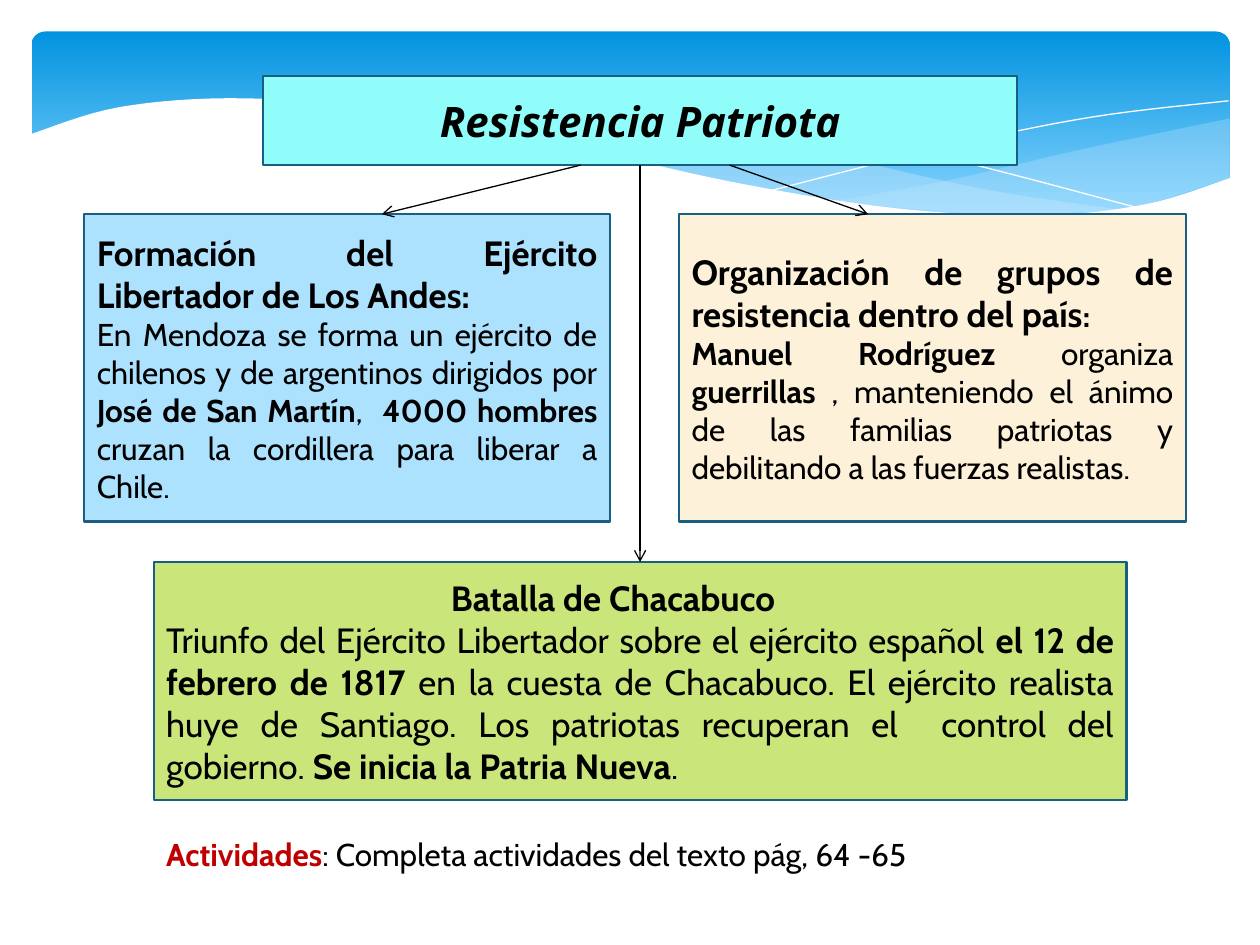
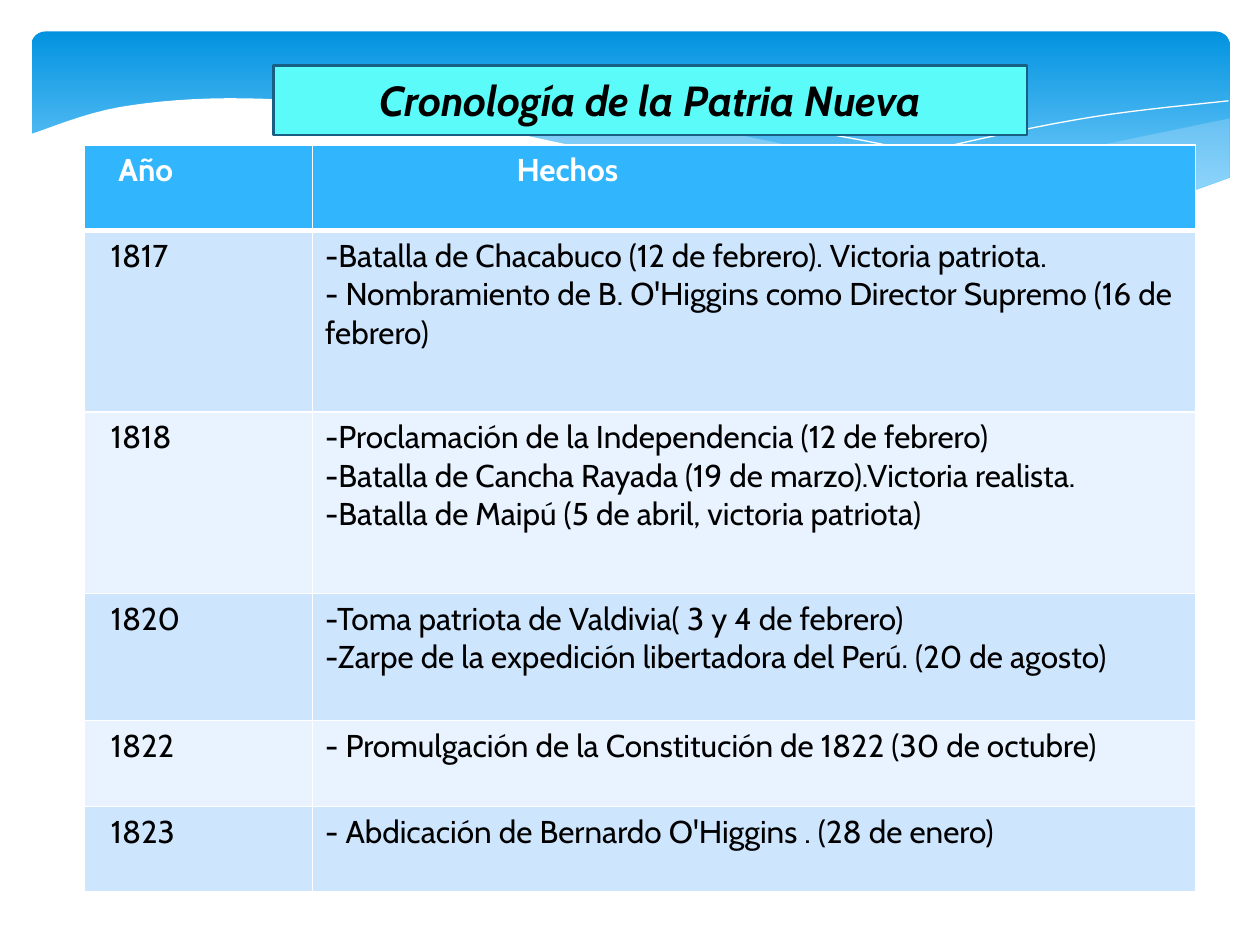
from dataclasses import dataclass
from typing import Optional

from lxml.etree import SubElement
from pptx import Presentation
from pptx.dml.color import RGBColor
from pptx.enum.shapes import MSO_CONNECTOR, MSO_SHAPE
from pptx.enum.text import MSO_ANCHOR, MSO_AUTO_SIZE, PP_ALIGN
from pptx.oxml.ns import qn
from pptx.util import Inches, Pt

COLORS = {
    "white": "FFFFFF",
    "black": "000000",
    "outline": "195F84",
    "sky_top": "0293E0",
    "sky_bottom": "83D3FE",
    "wave": "C6E7FC",
    "resistance": "91FDFA",
    "chronology": "5AFBF8",
    "army": "ADE2FE",
    "guerrilla": "FDF2D9",
    "battle": "CAE67B",
    "activities": "C00000",
    "header": "31B6FD",
    "odd_row": "CEE5FE",
    "even_row": "E8F3FF",
}
FONT = "Cabin"
TITLE_ONLY_LAYOUT = 5
CURVE_STEPS = 8


@dataclass(frozen=True)
class Run:
    text: str
    bold: bool = False
    size: float = 18
    color: str = "black"
    italic: bool = False
    font: str = FONT


@dataclass(frozen=True)
class Frame:
    left: float
    top: float
    width: float
    height: float

    def lengths(self) -> tuple:
        return tuple(Inches(value) for value in (self.left, self.top, self.width, self.height))


@dataclass(frozen=True)
class Box:
    frame: Frame
    fill: str
    paragraphs: tuple


@dataclass(frozen=True)
class Wave:
    curves: tuple
    fill: Optional[str] = None
    opacity: int = 100


WAVES = (
    Wave((
        ((9.76, 0.94), (8.61, 1.18), (7.53, 1.43), (6.61, 1.6)),
        ((6.61, 1.6), (8.14, 1.72), (8.97, 1.65), (9.76, 1.41)),
    ), "wave", 29),
    Wave((
        ((8.93, 1.67), (7.75, 1.49), (6.29, 1.16), (4.89, 0.89), (3.8, 0.8), (2.86, 0.86)),
        ((2.86, 0.86), (4.49, 1.16), (6.01, 1.5), (7.48, 1.7), (8.93, 1.67)),
    ), "wave", 40),
    Wave((((3.09, 0.9), (4.16, 0.81), (5.56, 0.91), (7.27, 1.2), (9.07, 1.66)),)),
    Wave((((6.13, 1.51), (7.48, 1.17), (8.66, 0.93), (9.75, 0.8)),)),
    Wave((
        ((9.77, 1.41), (9.1, 1.62), (8.23, 1.71), (7.08, 1.65), (5.79, 1.44),
         (4.47, 1.14), (3.16, 0.88), (1.93, 0.78), (0.95, 0.85), (0.23, 1.07)),
        ((0.23, 2.24), (9.77, 2.24)),
    ), "white"),
)

ARMY = Box(Frame(0.67, 1.7, 4.17, 2.44), "army", (
    (Run("Formación del Ejército Libertador de Los Andes:", True, 20),),
    (
        Run("En Mendoza se forma un ejército de chilenos y de argentinos dirigidos por "),
        Run("José de San Martín", True),
        Run(",  "),
        Run("4000 hombres ", True),
        Run("cruzan la cordillera para liberar a Chile."),
    ),
))
GUERRILLA = Box(Frame(5.39, 1.7, 4.02, 2.44), "guerrilla", (
    (Run("Organización de grupos de resistencia dentro del país", True, 20), Run(":", True)),
    (
        Run("Manuel Rodríguez ", True),
        Run("organiza "),
        Run("guerrillas ", True),
        Run(", manteniendo el ánimo de las familias patriotas y debilitando a las fuerzas realistas."),
    ),
))
BATTLE = Box(Frame(1.22, 4.46, 7.72, 1.89), "battle", (
    (Run("Batalla de Chacabuco", True, 20),),
    (
        Run("Triunfo del Ejército Libertador sobre el ejército español ", size=20),
        Run("el 12 de febrero de 1817 ", True, 20),
        Run("en la cuesta de Chacabuco. El ejército realista huye de Santiago. "
            "Los patriotas recuperan el  control del gobierno. ", size=20),
        Run("Se inicia la Patria Nueva", True, 20),
        Run(".", size=20),
    ),
))
ACTIVITIES = (
    Run("Actividades", True, color="activities"),
    Run(": Completa actividades del texto pág, 64 -65"),
)

CHRONOLOGY = (
    ("Año", ("Hechos",)),
    ("1817", (
        "-Batalla de Chacabuco (12 de febrero). Victoria patriota.",
        "- Nombramiento de B. O'Higgins como Director Supremo (16 de febrero)",
    )),
    ("1818", (
        "-Proclamación de la Independencia (12 de febrero)",
        "-Batalla de Cancha Rayada (19 de marzo).Victoria realista.",
        "-Batalla de Maipú (5 de abril, victoria patriota)",
    )),
    ("1820", (
        "-Toma patriota de Valdivia( 3 y 4 de febrero)",
        "-Zarpe de la expedición libertadora del Perú. (20 de agosto)",
    )),
    ("1822", ("- Promulgación de la Constitución de 1822 (30 de octubre)",)),
    ("1823", ("- Abdicación de Bernardo O'Higgins . (28 de enero)",)),
)
COLUMN_WIDTHS = (1.81, 7.01)
ROW_HEIGHTS = (0.68, 1.44, 1.44, 1.01, 0.68, 0.68)
HEADER_MARGINS = (0.27, 1.62)
BODY_MARGINS = (0.21, 0.1)


def rgb(name: str) -> RGBColor:
    return RGBColor.from_string(COLORS[name])


def write(text_frame, paragraphs: tuple, alignment=PP_ALIGN.LEFT) -> None:
    text_frame.word_wrap = True
    for index, runs in enumerate(paragraphs):
        paragraph = text_frame.add_paragraph() if index else text_frame.paragraphs[0]
        paragraph.alignment = alignment
        for item in runs:
            run = paragraph.add_run()
            run.text = item.text
            run.font.name = item.font
            run.font.size = Pt(item.size)
            run.font.bold = item.bold
            run.font.italic = item.italic
            run.font.color.rgb = rgb(item.color)


def paint_box(shape, fill: str) -> None:
    shape.fill.solid()
    shape.fill.fore_color.rgb = rgb(fill)
    shape.line.color.rgb = rgb("outline")
    shape.line.width = Pt(1.25)
    shape.text_frame.vertical_anchor = MSO_ANCHOR.MIDDLE


def spline(before: float, start: float, end: float, after: float, t: float) -> float:
    start_slope, end_slope = (end - before) / 2, (after - start) / 2
    change = end - start
    return (start + start_slope * t
            + (3 * change - 2 * start_slope - end_slope) * t ** 2
            + (start_slope + end_slope - 2 * change) * t ** 3)


def smooth_points(knots: tuple) -> list:
    padded = (knots[0], *knots, knots[-1])
    points = [
        tuple(Inches(spline(*values, step / CURVE_STEPS)) for values in zip(*padded[i:i + 4]))
        for i in range(len(knots) - 1)
        for step in range(CURVE_STEPS)
    ]
    return points + [tuple(Inches(value) for value in knots[-1])]


def draw_wave(slide, wave: Wave) -> None:
    points = [point for curve in wave.curves for point in smooth_points(curve)]
    builder = slide.shapes.build_freeform(*points[0])
    builder.add_line_segments(points[1:], close=wave.fill is not None)
    shape = builder.convert_to_shape()
    shape.shadow.inherit = False
    if wave.fill is None:
        shape.fill.background()
        shape.line.color.rgb = rgb("white")
        shape.line.width = Pt(0)
        return
    shape.fill.solid()
    shape.fill.fore_color.rgb = rgb(wave.fill)
    shape.line.fill.background()
    if wave.opacity < 100:
        color = shape.element.find(".//" + qn("a:srgbClr"))
        SubElement(color, qn("a:alpha")).set("val", str(wave.opacity * 1000))


def draw_backdrop(slide) -> None:
    sky = slide.shapes.add_shape(
        MSO_SHAPE.ROUNDED_RECTANGLE, *Frame(0.25, 0.25, 9.51, 1.56).lengths())
    sky.adjustments[0] = 0.07
    sky.shadow.inherit = False
    sky.line.fill.background()
    sky.fill.gradient()
    sky.fill.gradient_angle = 270
    for stop, position, color in zip(sky.fill.gradient_stops, (0, 0.9), ("sky_top", "sky_bottom")):
        stop.position = position
        stop.color.rgb = rgb(color)
    for wave in WAVES:
        draw_wave(slide, wave)


def add_titled_slide(presentation, frame: Frame, fill: str, text: str, font: str = FONT) -> tuple:
    slide = presentation.slides.add_slide(presentation.slide_layouts[TITLE_ONLY_LAYOUT])
    draw_backdrop(slide)
    title = slide.shapes.title
    slide.shapes.element.append(title.element)
    title.left, title.top, title.width, title.height = frame.lengths()
    paint_box(title, fill)
    title.text_frame.auto_size = MSO_AUTO_SIZE.NONE
    write(title.text_frame, ((Run(text, True, 24, italic=True, font=font),),), PP_ALIGN.CENTER)
    return slide, title


def draw_box(slide, box: Box):
    shape = slide.shapes.add_shape(MSO_SHAPE.RECTANGLE, *box.frame.lengths())
    shape.shadow.inherit = False
    paint_box(shape, box.fill)
    write(shape.text_frame, box.paragraphs, PP_ALIGN.JUSTIFY)
    return shape


def draw_arrow(slide, start: tuple, end: tuple):
    connector = slide.shapes.add_connector(
        MSO_CONNECTOR.STRAIGHT, *(Inches(value) for value in start + end))
    connector.line.color.rgb = rgb("black")
    connector.line.width = Pt(0.75)
    SubElement(connector.element.find(".//" + qn("a:ln")), qn("a:tailEnd")).set("type", "arrow")
    SubElement(connector.element.spPr, qn("a:effectLst"))
    return connector


def set_border(cell, side: str, width: float) -> None:
    line = SubElement(cell._tc.get_or_add_tcPr(), qn(f"a:ln{side}"), w=str(Pt(width)))
    fill = SubElement(line, qn("a:solidFill"))
    SubElement(fill, qn("a:srgbClr"), val=COLORS["white"])


def build_resistance(presentation) -> None:
    slide, title = add_titled_slide(
        presentation, Frame(2.09, 0.6, 5.98, 0.71), "resistance", "Resistencia Patriota", "Noto Sans")
    draw_box(slide, ARMY)
    draw_box(slide, GUERRILLA)
    battle = draw_box(slide, BATTLE)
    heading = battle.element.txBody.p_lst[0].get_or_add_pPr()
    heading.set("marL", str(Inches(2.26)))
    draw_arrow(slide, (4.61, 1.31), (3.03, 1.7))
    draw_arrow(slide, (5.79, 1.31), (6.89, 1.7))
    central_arrow = draw_arrow(slide, (5.08, 1.31), (5.08, 4.46))
    central_arrow.begin_connect(title, 2)
    central_arrow.end_connect(battle, 0)
    activities = slide.shapes.add_textbox(*Frame(1.22, 6.58, 7.09, 0.4).lengths())
    write(activities.text_frame, (ACTIVITIES,))
    activities.text_frame.auto_size = MSO_AUTO_SIZE.SHAPE_TO_FIT_TEXT


def build_chronology(presentation) -> None:
    slide, _ = add_titled_slide(
        presentation, Frame(2.17, 0.52, 5.98, 0.55), "chronology", "Cronología de la Patria Nueva")
    frame = Frame(0.67, 1.15, sum(COLUMN_WIDTHS), sum(ROW_HEIGHTS))
    table = slide.shapes.add_table(len(CHRONOLOGY), len(COLUMN_WIDTHS), *frame.lengths()).table
    for column, width in zip(table.columns, COLUMN_WIDTHS):
        column.width = Inches(width)
    for row_index, (year, events) in enumerate(CHRONOLOGY):
        table.rows[row_index].height = Inches(ROW_HEIGHTS[row_index])
        header = row_index == 0
        fill = "header" if header else "odd_row" if row_index % 2 else "even_row"
        color = "white" if header else "black"
        margins = HEADER_MARGINS if header else BODY_MARGINS
        borders = {"L": 1, "R": 1, "T": 3 if row_index == 1 else 1, "B": 3 if header else 1}
        for column_index, lines in enumerate(((year,), events)):
            cell = table.cell(row_index, column_index)
            cell.margin_left = Inches(margins[column_index])
            write(cell.text_frame, tuple((Run(line, header, color=color),) for line in lines))
            for side, width in borders.items():
                set_border(cell, side, width)
            cell.fill.solid()
            cell.fill.fore_color.rgb = rgb(fill)


def main() -> None:
    presentation = Presentation()
    presentation.slide_width = Inches(10)
    presentation.slide_height = Inches(7.5)
    build_resistance(presentation)
    build_chronology(presentation)
    presentation.save("out.pptx")


if __name__ == "__main__":
    main()
